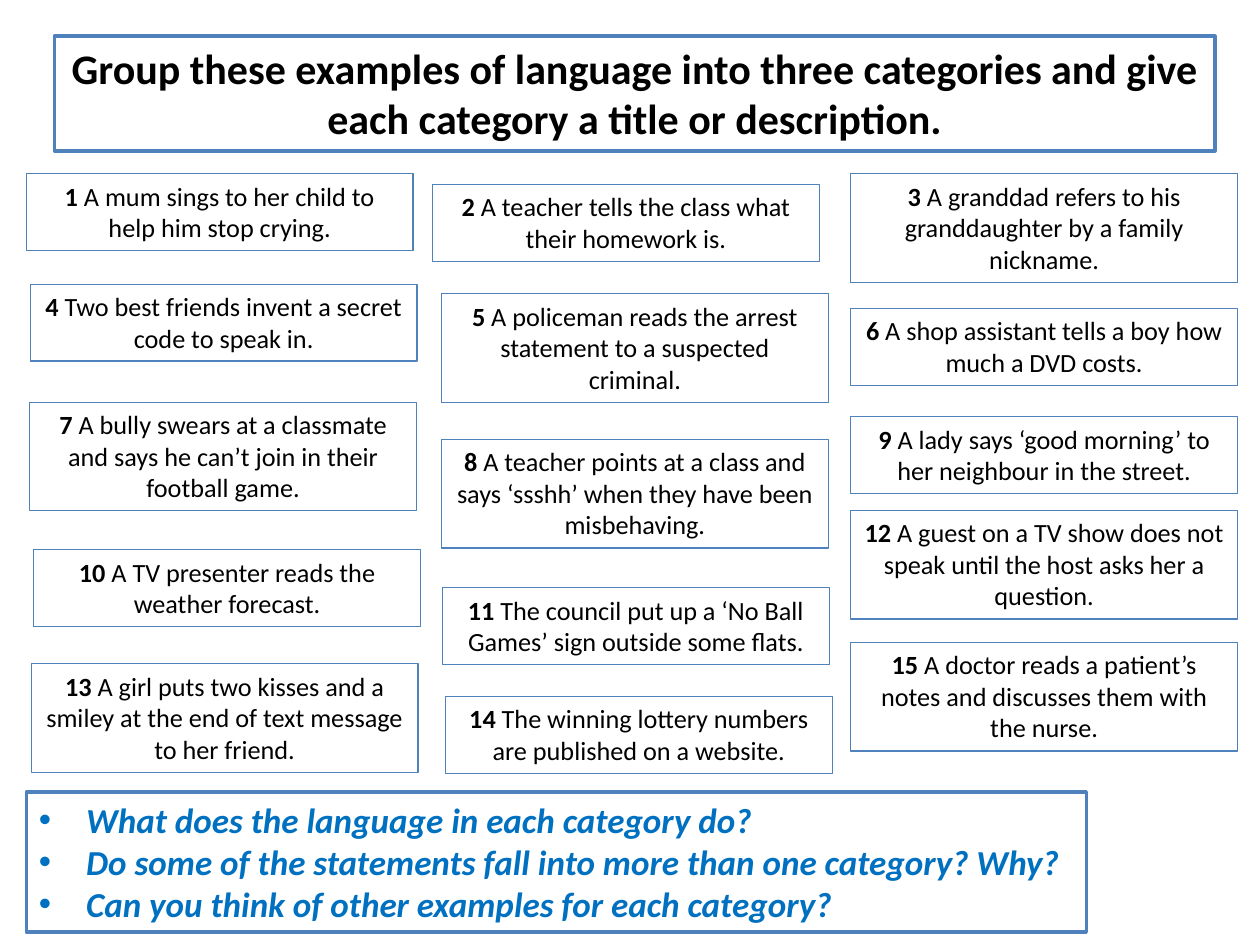
from pptx import Presentation
from pptx.dml.color import RGBColor
from pptx.enum.text import MSO_ANCHOR as Anchor, MSO_AUTO_SIZE as AutoSize, PP_ALIGN as Align
from pptx.util import Cm, Pt


def rgb(hex_code):
    return RGBColor.from_string(hex_code)


def frame_box(box, left, top, width, height, line_width):
    """Place a box of fixed size, outline it in blue and prepare its text frame."""
    box.left, box.top, box.width, box.height = Cm(left), Cm(top), Cm(width), Cm(height)
    box.line.color.rgb = rgb("4F81BD")
    box.line.width = Pt(line_width)
    box.text_frame.word_wrap = True
    box.text_frame.auto_size = AutoSize.NONE
    box.text_frame.vertical_anchor = Anchor.TOP


prs = Presentation()
prs.slide_width, prs.slide_height = Cm(25.4), Cm(19.05)
slide = prs.slides.add_slide(prs.slide_layouts[1])

# Task at the top
task = slide.shapes.title
frame_box(task, 1.1, 0.73, 23.39, 2.31, 2)
task.text_frame.text = ("Group these examples of language into three categories "
                        "and give each category a title or description.")
heading = task.text_frame.paragraphs[0]
heading.alignment = Align.CENTER
heading.font.name, heading.font.size, heading.font.bold = "Calibri", Pt(24), True
heading.font.color.rgb = rgb("000000")

# Numbered examples: left, top, number of text lines, wording
examples = [
    (0.53, 3.5, 2, "A mum sings to her child to help him stop crying."),
    (8.72, 3.72, 2, "A teacher tells the class what their homework is."),
    (17.15, 3.5, 3, "A granddad refers to his granddaughter by a family nickname."),
    (0.61, 5.73, 2, "Two best friends invent a secret code to speak in."),
    (8.9, 5.92, 3, "A policeman reads the arrest statement to a suspected criminal."),
    (17.15, 6.22, 2, "A shop assistant tells a boy how much a DVD costs."),
    (0.6, 8.11, 3, "A bully swears at a classmate and says he can’t join in their football game."),
    (8.9, 8.86, 3, "A teacher points at a class and says ‘ssshh’ when they have been misbehaving."),
    (17.15, 8.4, 2, "A lady says ‘good morning’ to her neighbour in the street."),
    (0.68, 11.08, 2, "A TV presenter reads the weather forecast."),
    (8.92, 11.85, 2, "The council put up a ‘No Ball Games’ sign outside some flats."),
    (17.15, 10.29, 3, "A guest on a TV show does not speak until the host asks her a question."),
    (0.63, 13.38, 3, "A girl puts two kisses and a smiley at the end of text message to her friend."),
    (8.98, 14.04, 2, "The winning lottery numbers are published on a website."),
    (17.15, 12.95, 3, "A doctor reads a patient’s notes and discusses them with the nurse."),
]
line_height, padding = 0.64, 0.27
for number, (left, top, lines, wording) in enumerate(examples, start=1):
    card = slide.shapes.add_textbox(0, 0, 0, 0)
    frame_box(card, left, top, 7.8, lines * line_height + padding, 0.75)
    sentence = card.text_frame.paragraphs[0]
    sentence.alignment = Align.CENTER
    sentence.font.name, sentence.font.size = "Calibri", Pt(15)
    sentence.font.color.rgb = rgb("000000")
    label = sentence.add_run()
    label.text = str(number)
    label.font.bold = True
    sentence.add_run().text = f" {wording}"

# Discussion questions at the bottom
questions = slide.placeholders[1]
frame_box(questions, 0.53, 15.97, 21.37, 2.82, 2)
questions.text_frame.text = "\n".join([
    "What does the language in each category do?",
    "Do some of the statements fall into more than one category? Why?",
    "Can you think of other examples for each category?",
])
for question in questions.text_frame.paragraphs:
    question.space_before = Pt(0)
    question.font.name, question.font.size = "Calibri", Pt(20)
    question.font.bold = question.font.italic = True
    question.font.color.rgb = rgb("0070C0")

prs.save("out.pptx")
